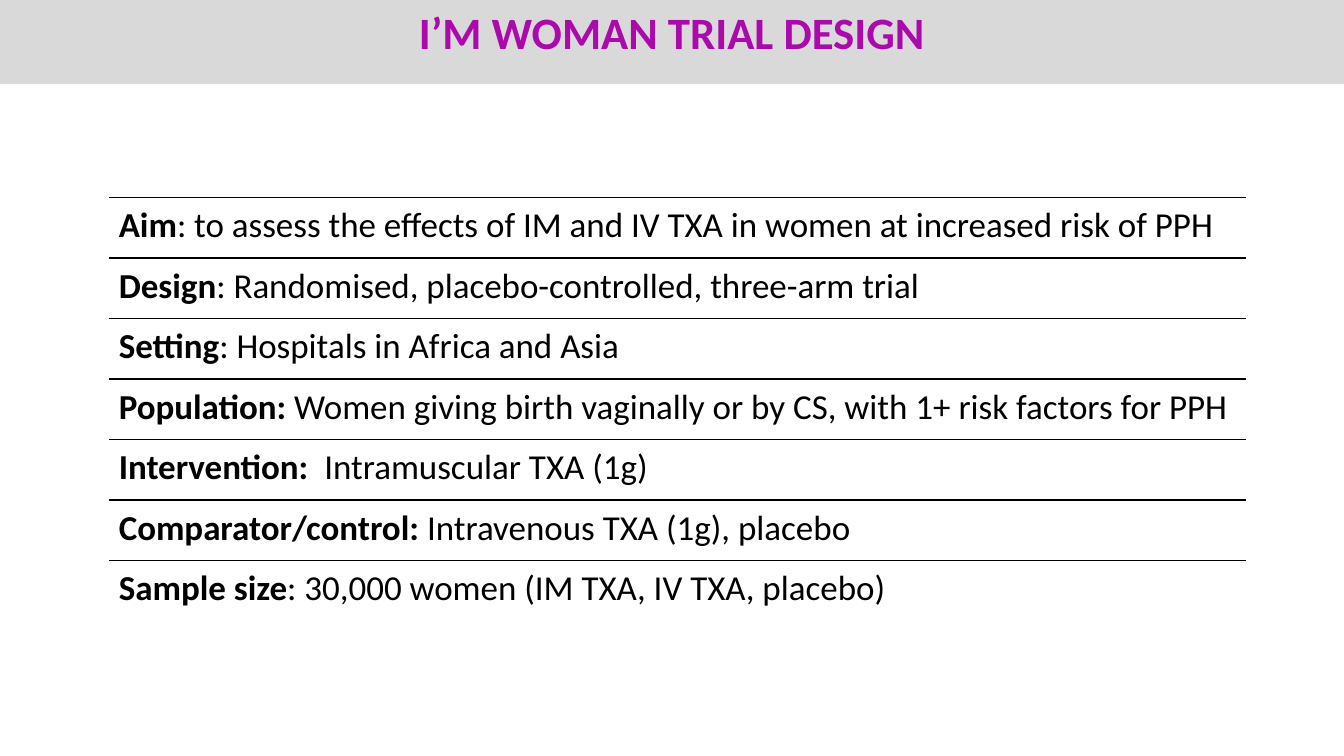
from pptx import Presentation
from pptx.dml.color import RGBColor
from pptx.enum.shapes import MSO_CONNECTOR
from pptx.enum.text import MSO_ANCHOR, MSO_AUTO_SIZE, PP_ALIGN
from pptx.oxml.ns import qn
from pptx.util import Inches, Pt

TITLE = "I’M WOMAN TRIAL DESIGN"
ROWS = [
    ("Aim", ": to assess the effects of IM and IV TXA in women at increased risk of PPH"),
    ("Design", ": Randomised, placebo-controlled, three-arm trial"),
    ("Setting", ": Hospitals in Africa and Asia"),
    ("Population:", " Women giving birth vaginally or by CS, with 1+ risk factors for PPH"),
    ("Intervention: ", " Intramuscular TXA (1g)"),
    ("Comparator/control:", " Intravenous TXA (1g), placebo"),
    ("Sample size", ": 30,000 women (IM TXA, IV TXA, placebo)"),
]
BLACK, PURPLE, GREY = "000000", "AB09AB", "D9D9D9"
SLIDE_W, SLIDE_H, TITLE_H = 13.33, 7.5, 0.64
LEFT, TOP, WIDTH, ROW_H = 1.08, 1.96, 11.28, 0.6
INSET = 0.1


def rgb(value):
    return RGBColor.from_string(value)


def add_run(p, text, size, color, bold):
    r = p.add_run()
    r.text = text
    for name, value in {"name": "Calibri", "size": Pt(size), "bold": bold}.items():
        setattr(r.font, name, value)
    r.font.color.rgb = rgb(color)


def add_title(s):
    title = s.shapes.title
    title.left, title.top = Inches(0), Inches(0)
    title.width, title.height = Inches(SLIDE_W), Inches(TITLE_H)
    title.fill.solid()
    title.fill.fore_color.rgb = rgb(GREY)
    tf = title.text_frame
    tf.auto_size = MSO_AUTO_SIZE.SHAPE_TO_FIT_TEXT
    tf.vertical_anchor = MSO_ANCHOR.TOP
    p = tf.paragraphs[0]
    p.alignment = PP_ALIGN.CENTER
    add_run(p, TITLE, 32, PURPLE, True)


def add_rule(s, y):
    rule = s.shapes.add_connector(
        MSO_CONNECTOR.STRAIGHT, Inches(LEFT), Inches(y), Inches(LEFT + WIDTH), Inches(y))
    rule.line.color.rgb = rgb(BLACK)
    rule.line.width = Pt(1)
    sp_pr = rule._element.spPr
    sp_pr.append(sp_pr.makeelement(qn("a:effectLst"), {}))


def add_row(s, y, label, detail):
    box = s.shapes.add_textbox(Inches(LEFT), Inches(y), Inches(WIDTH), Inches(ROW_H))
    tf = box.text_frame
    tf.word_wrap = True
    for side in ("left", "top", "right", "bottom"):
        setattr(tf, f"margin_{side}", Inches(INSET))
    p = tf.paragraphs[0]
    p.line_spacing = 0.9
    add_run(p, label, 25, BLACK, True)
    add_run(p, detail, 25, BLACK, False)


def main():
    prs = Presentation()
    prs.slide_width, prs.slide_height = Inches(SLIDE_W), Inches(SLIDE_H)
    s = prs.slides.add_slide(prs.slide_layouts[5])
    add_title(s)
    for i, (label, detail) in enumerate(ROWS):
        y = TOP + i * ROW_H
        add_rule(s, y)
        add_row(s, y, label, detail)
    prs.save("out.pptx")


if __name__ == "__main__":
    main()
